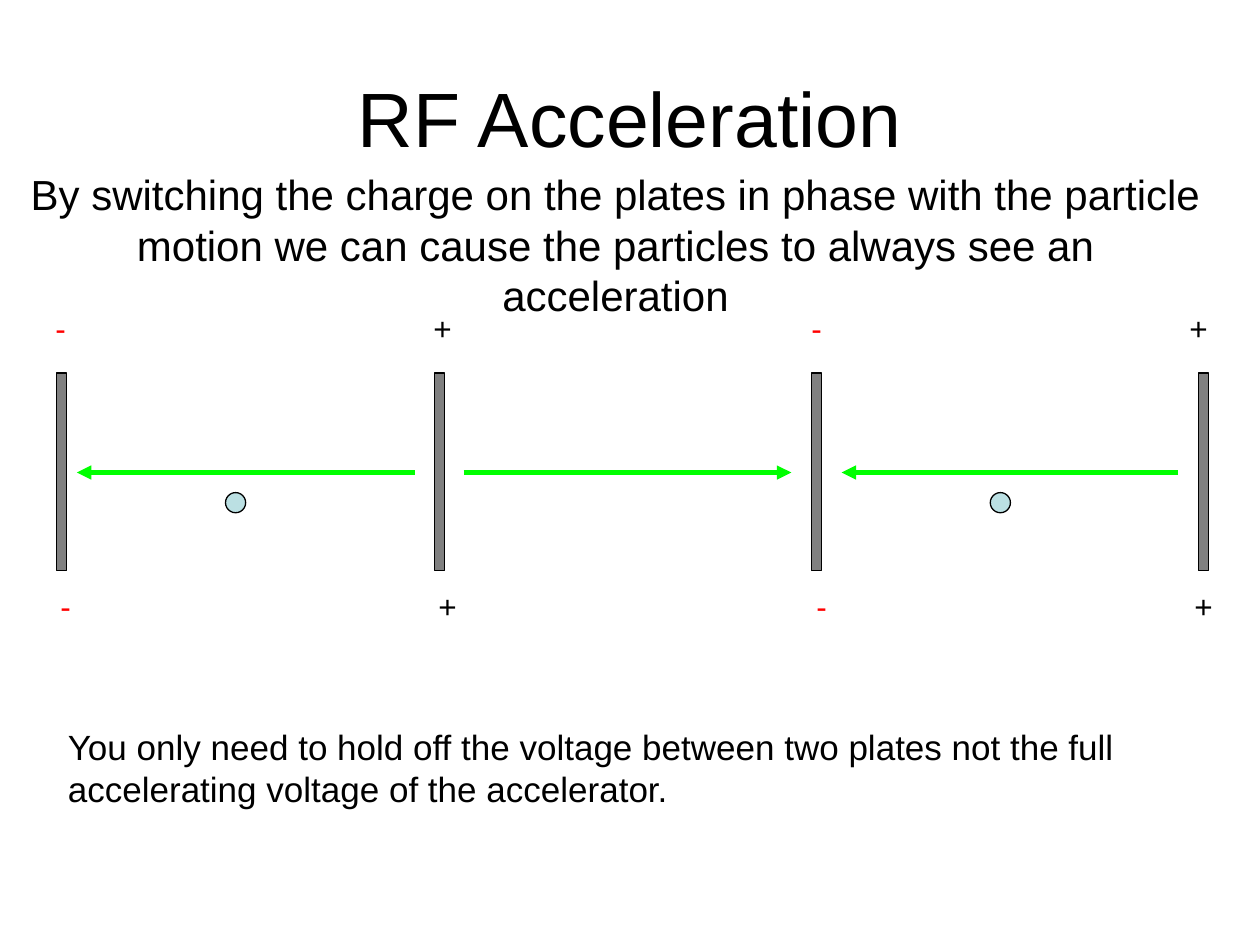
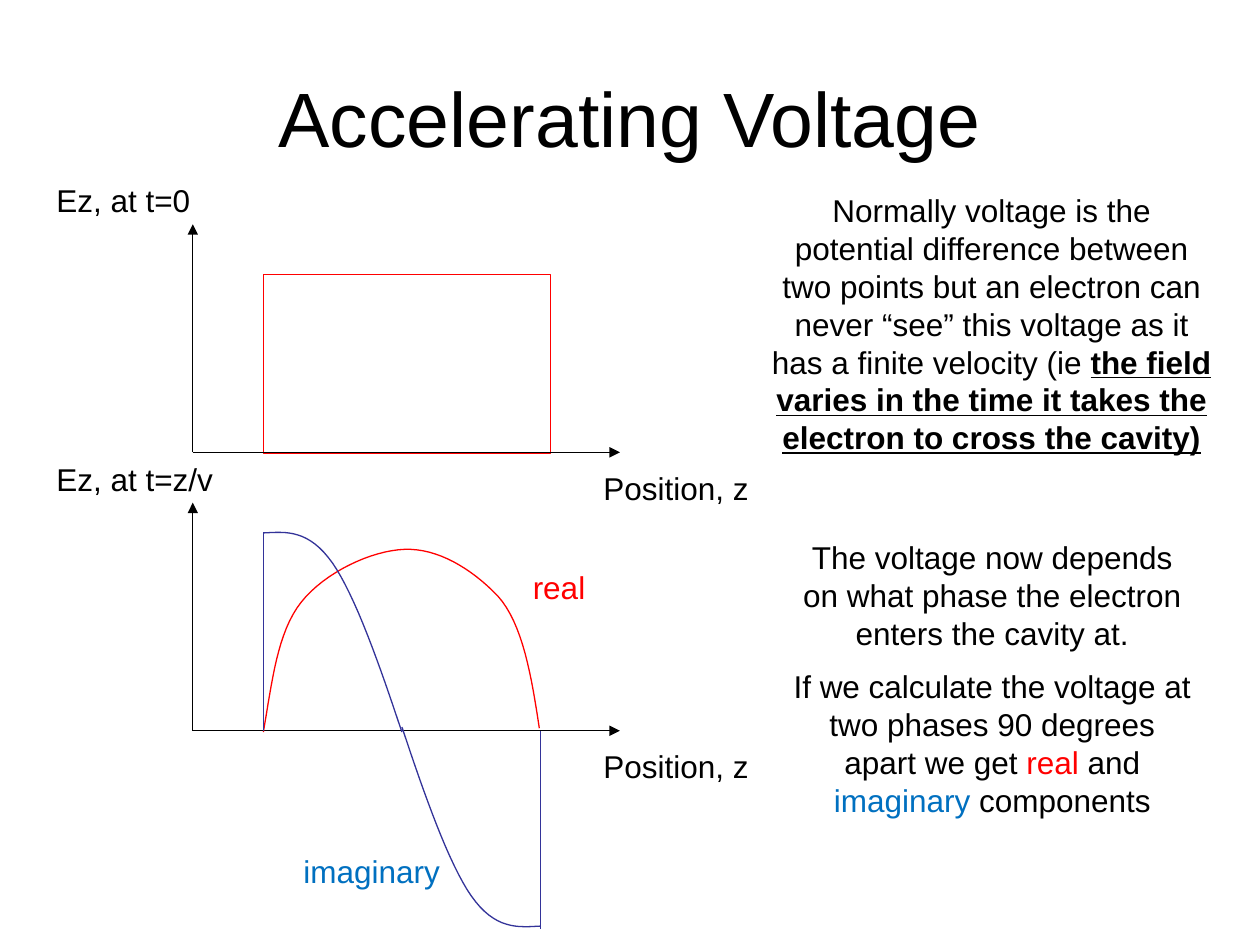
"""Build two slides on RF acceleration and the accelerating voltage."""
import lxml.etree
import pptx
import pptx.dml.color
import pptx.enum.shapes
import pptx.enum.text
import pptx.oxml.ns
import pptx.util

PX = 9144
KIND = pptx.enum.shapes.MSO_SHAPE
RGB = pptx.dml.color.RGBColor.from_string
ALIGN = pptx.enum.text.PP_ALIGN
ANCHOR = pptx.enum.text.MSO_ANCHOR
qn = pptx.oxml.ns.qn


class Theme:
    font = "Arial"
    title, lead, note, body = 44, 24, 20, 18
    thin, thick = 0.75, 2.75
    black, white, red, green = "000000", "FFFFFF", "FF0000", "00FF00"
    blue, navy, gray, pale = "0070C0", "333399", "808080", "BBE0E3"


def text(slide, box, *paras, size=Theme.body, color=Theme.black,
         align=ALIGN.LEFT, anchor=ANCHOR.TOP, gap=9, tabs=()):
    """Add a text box; each paragraph is a string or a list of (words, color, strong)."""
    frame = slide.shapes.add_textbox(*[v * PX for v in box]).text_frame
    frame.word_wrap = True
    frame.vertical_anchor = anchor
    for i, runs in enumerate(paras):
        para = frame.add_paragraph() if i else frame.paragraphs[0]
        if tabs:
            stops = lxml.etree.SubElement(para._p.get_or_add_pPr(), qn("a:tabLst"))
            for stop in tabs:
                lxml.etree.SubElement(stops, qn("a:tab"), pos=str(stop * PX), algn="l")
        para.alignment = align
        para.space_before = pptx.util.Pt(gap if i else 0)
        if isinstance(runs, str):
            runs = [(runs, color, False)]
        for words, tint, strong in runs:
            run = para.add_run()
            run.text = words
            run.font.name = Theme.font
            run.font.size = pptx.util.Pt(size)
            run.font.color.rgb = RGB(tint)
            if strong:
                run.font.bold = run.font.underline = True


def line(slide, ends, color=Theme.black, width=Theme.thin, arrow=True):
    """Add a straight line, with an arrowhead at its end if asked."""
    link = slide.shapes.add_connector(
        pptx.enum.shapes.MSO_CONNECTOR.STRAIGHT, *[v * PX for v in ends])
    link.line.color.rgb = RGB(color)
    link.line.width = pptx.util.Pt(width)
    props = link.element.spPr
    if arrow:
        lxml.etree.SubElement(props.find(qn("a:ln")), qn("a:tailEnd"), type="triangle")
    lxml.etree.SubElement(props, qn("a:effectLst"))


deck = pptx.Presentation()
deck.slide_width, deck.slide_height = 1000 * PX, 750 * PX
pages = []
for name in ("RF Acceleration", "Accelerating Voltage"):
    page = deck.slides.add_slide(deck.slide_layouts[6])
    text(page, (50, 30, 900, 125), name, size=Theme.title,
         align=ALIGN.CENTER, anchor=ANCHOR.MIDDLE)
    pages.append(page)
plates, volts = pages

forms = [(plates, KIND.RECTANGLE, (x, 296, 8, 157), Theme.gray, Theme.black)
         for x in (45, 345, 644, 951)]
forms += [(plates, KIND.OVAL, (x, 391, 16, 16), Theme.pale, Theme.black)
          for x in (179, 786)]
forms.append((volts, KIND.RECTANGLE, (209, 218, 228, 142), Theme.white, Theme.red))
for page, kind, box, fill, edge in forms:
    form = page.shapes.add_shape(kind, *[v * PX for v in box])
    form.shadow.inherit = False
    form.fill.solid()
    form.fill.fore_color.rgb = RGB(fill)
    form.line.color.rgb = RGB(edge)
    form.line.width = pptx.util.Pt(Theme.thin)

for start, end in ((329, 61), (368, 628), (935, 668)):
    line(plates, (start, 375, end, 375), Theme.green, Theme.thick)
minus, plus = ("-", Theme.red, False), ("\t+\t", Theme.black, False)
for left, top in ((34, 240), (38, 461)):
    text(plates, (left, top, 965, 40), [minus, plus, minus, ("\t+", Theme.black, False)],
         tabs=(300, 600, 900))
text(plates, (8, 129, 961, 130),
     "By switching the charge on the plates in phase with the particle motion "
     "we can cause the particles to always see an acceleration",
     size=Theme.lead, align=ALIGN.CENTER)
text(plates, (44, 571, 951, 128),
     "You only need to hold off the voltage between two plates not the full "
     "accelerating voltage of the accelerator.", size=Theme.note)

text(volts, (602, 147, 370, 220),
     [("Normally voltage is the potential difference between two points but an electron "
       "can never “see” this voltage as it has a finite velocity (ie ", Theme.black, False),
      ("the field varies in the time it takes the electron to cross the cavity)",
       Theme.black, True)], align=ALIGN.CENTER)
text(volts, (618, 422, 339, 235),
     "The voltage now depends on what phase the electron enters the cavity at.",
     [("If we calculate the voltage at two phases 90 degrees apart we get ",
       Theme.black, False),
      ("real", Theme.red, False), (" and ", Theme.black, False),
      ("imaginary", Theme.blue, False), (" components", Theme.black, False)],
     align=ALIGN.CENTER)
for base, label in ((359, "Ez, at t=0"), (580, "Ez, at t=z/v")):
    text(volts, (35, base - 220, 150, 40), label)
    text(volts, (469, base + 8, 149, 40), "Position, z")
    line(volts, (153, base, 153, base - 181))
    line(volts, (153, base, 492, base))

real = [(209, 581), (216, 541), (220, 502), (239, 478), (258, 454), (295, 437), (321, 436),
        (347, 435), (374, 451), (395, 473), (415, 495), (422, 538), (428, 578)]
rise = [(209, 423), (227, 422), (245, 420), (264, 447), (282, 473), (301, 527), (319, 581)]
fall = [(638 - x, 1158 - y) for x, y in rise]
for nodes, color in ((real, Theme.red), (rise, Theme.navy), (fall, Theme.navy)):
    dots = []
    for i in range(0, len(nodes) - 1, 3):
        for step in range(1, 17):
            t = step / 16
            mix = ((1 - t) ** 3, 3 * t * (1 - t) ** 2, 3 * t * t * (1 - t), t ** 3)
            dots.append([PX * sum(m * node[axis] for m, node in zip(mix, nodes[i:i + 4]))
                         for axis in (0, 1)])
    pen = volts.shapes.build_freeform(nodes[0][0] * PX, nodes[0][1] * PX)
    pen.add_line_segments(dots, close=False)
    curve = pen.convert_to_shape()
    curve.shadow.inherit = False
    curve.fill.background()
    curve.line.color.rgb = RGB(color)
    curve.line.width = pptx.util.Pt(Theme.thin)

for ends in ((209, 580, 209, 422), (429, 737, 429, 580)):
    line(volts, ends, Theme.navy, arrow=False)
text(volts, (413, 446, 142, 40), "real", color=Theme.red)
text(volts, (231, 671, 142, 40), "imaginary", color=Theme.blue)

deck.save("out.pptx")
